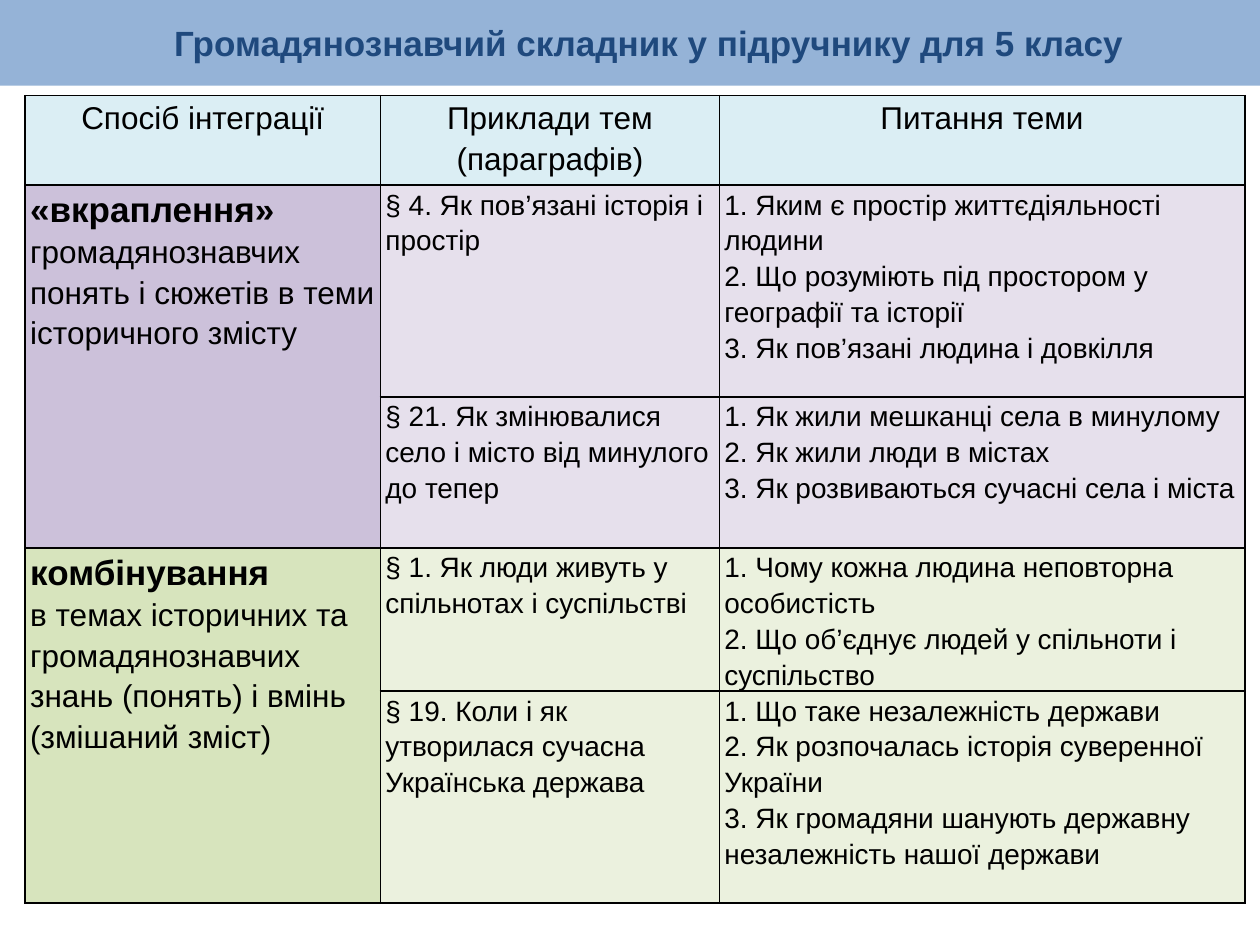
from dataclasses import dataclass

from lxml import etree
from pptx import Presentation
from pptx.dml.color import RGBColor
from pptx.enum.shapes import MSO_SHAPE
from pptx.enum.text import MSO_ANCHOR, PP_ALIGN
from pptx.oxml.ns import qn
from pptx.util import Inches, Pt

RECT = MSO_SHAPE.RECTANGLE
MIDDLE = MSO_ANCHOR.MIDDLE
LEFT, CENTER = PP_ALIGN.LEFT, PP_ALIGN.CENTER


@dataclass(frozen=True)
class Theme:
    font: str = "Arial"
    title_size: int = 20
    method_size: int = 18
    body_size: int = 16
    line_spacing: float = 1.15
    ink: str = "000000"
    title_ink: str = "1F497D"
    title_fill: str = "95B3D7"
    header_fill: str = "DBEEF4"


THEME = Theme()

TITLE = "Громадянознавчий складник у підручнику для 5 класу"
HEADERS = ["Спосіб інтеграції", "Приклади тем (параграфів)", "Питання теми"]
COL_WIDTHS = [2.82, 2.69, 4.17]
ROW_HEIGHTS = [0.71, 1.68, 1.2, 1.13, 1.68]

# Each method: its paragraphs as (text, is_keyword) runs, fills, and topics
METHODS = [
    {
        "name": [[("«вкраплення» ", True),
                  ("громадянознавчих понять і сюжетів в теми історичного змісту", False)]],
        "fill": "CCC1DA",
        "topic_fill": "E6E0EC",
        "topics": [
            ("§ 4. Як пов’язані історія і простір",
             ["1. Яким є простір життєдіяльності людини",
              "2. Що розуміють під простором у географії та історії",
              "3. Як пов’язані людина і довкілля"]),
            ("§ 21. Як змінювалися село і місто від минулого до тепер",
             ["1. Як жили мешканці села в минулому",
              "2. Як жили люди в містах",
              "3. Як розвиваються сучасні села і міста"]),
        ],
    },
    {
        "name": [[("комбінування", True)],
                 [("в темах історичних та громадянознавчих знань (понять) "
                   "і вмінь (змішаний зміст)", False)]],
        "fill": "D7E4BD",
        "topic_fill": "EBF1DE",
        "topics": [
            ("§ 1. Як люди живуть у спільнотах і суспільстві",
             ["1. Чому кожна людина неповторна особистість",
              "2. Що об’єднує людей у спільноти і суспільство"]),
            ("§ 19. Коли і як утворилася сучасна Українська держава",
             ["1. Що таке незалежність держави",
              "2. Як розпочалась історія суверенної України",
              "3. Як громадяни шанують державну незалежність нашої держави"]),
        ],
    },
]


def set_font(font, size, color, bold=False):
    font.name = THEME.font
    font.size = Pt(size)
    font.bold = bold
    font.color.rgb = RGBColor.from_string(color)


def add_title(slide, left, top, width, height):
    sp = slide.shapes.add_shape(RECT, left, top, width, height)
    sp.shadow.inherit = False
    sp.fill.solid()
    sp.fill.fore_color.rgb = RGBColor.from_string(THEME.title_fill)
    sp.line.fill.background()
    tf = sp.text_frame
    tf.word_wrap = True
    tf.vertical_anchor = MIDDLE
    tf.margin_left = Inches(0.4)
    p = tf.paragraphs[0]
    p.text = TITLE
    p.alignment = CENTER
    set_font(p.font, THEME.title_size, THEME.title_ink, bold=True)


def add_borders(cell):
    tc_pr = cell._tc.get_or_add_tcPr()
    for side in ("lnL", "lnR", "lnT", "lnB"):
        ln = etree.SubElement(tc_pr, qn(f"a:{side}"), w=str(Pt(1)))
        fill = etree.SubElement(ln, qn("a:solidFill"))
        etree.SubElement(fill, qn("a:srgbClr"), val=THEME.ink)


def style_cell(cell, fill):
    cell.margin_left = cell.margin_right = Inches(0.04)
    cell.margin_top = cell.margin_bottom = 0
    cell.fill.solid()
    cell.fill.fore_color.rgb = RGBColor.from_string(fill)


def add_paragraphs(cell, count, size, align=LEFT):
    tf = cell.text_frame
    for _ in range(count - 1):
        tf.add_paragraph()
    for p in tf.paragraphs:
        p.alignment = align
        p.line_spacing = THEME.line_spacing
        set_font(p.font, size, THEME.ink)
    return tf.paragraphs


def fill_cell(cell, lines, size, fill, align=LEFT):
    style_cell(cell, fill)
    for p, line in zip(add_paragraphs(cell, len(lines), size, align), lines):
        p.text = line


def fill_method(cell, name, fill):
    style_cell(cell, fill)
    for p, runs in zip(add_paragraphs(cell, len(name), THEME.method_size), name):
        for text, is_keyword in runs:
            r = p.add_run()
            r.text = text
            size = THEME.title_size if is_keyword else THEME.method_size
            set_font(r.font, size, THEME.ink, is_keyword)


def add_methods_table(slide, left, top, width, height):
    table = slide.shapes.add_table(
        len(ROW_HEIGHTS), len(COL_WIDTHS), left, top, width, height).table
    table.first_row = table.horz_banding = False
    for col, w in zip(table.columns, COL_WIDTHS):
        col.width = Inches(w)
    for row, h in zip(table.rows, ROW_HEIGHTS):
        row.height = Inches(h)
    for cell in table.iter_cells():
        add_borders(cell)

    # Header row
    for c, text in enumerate(HEADERS):
        fill_cell(table.cell(0, c), [text], THEME.method_size, THEME.header_fill, CENTER)

    # One merged method cell beside its topics
    row = 1
    for method in METHODS:
        topics = method["topics"]
        name_cell = table.cell(row, 0)
        name_cell.merge(table.cell(row + len(topics) - 1, 0))
        fill_method(name_cell, method["name"], method["fill"])
        for topic, questions in topics:
            for c, lines in enumerate(([topic], questions), start=1):
                fill_cell(table.cell(row, c), lines, THEME.body_size, method["topic_fill"])
            row += 1


def main():
    prs = Presentation()
    prs.slide_width, prs.slide_height = Inches(10), Inches(7.5)
    slide = prs.slides.add_slide(prs.slide_layouts[6])
    add_title(slide, 0, 0, prs.slide_width, Inches(0.68))
    add_methods_table(slide, Inches(0.2), Inches(0.76),
                      Inches(sum(COL_WIDTHS)), Inches(sum(ROW_HEIGHTS)))
    prs.save("out.pptx")


if __name__ == "__main__":
    main()
